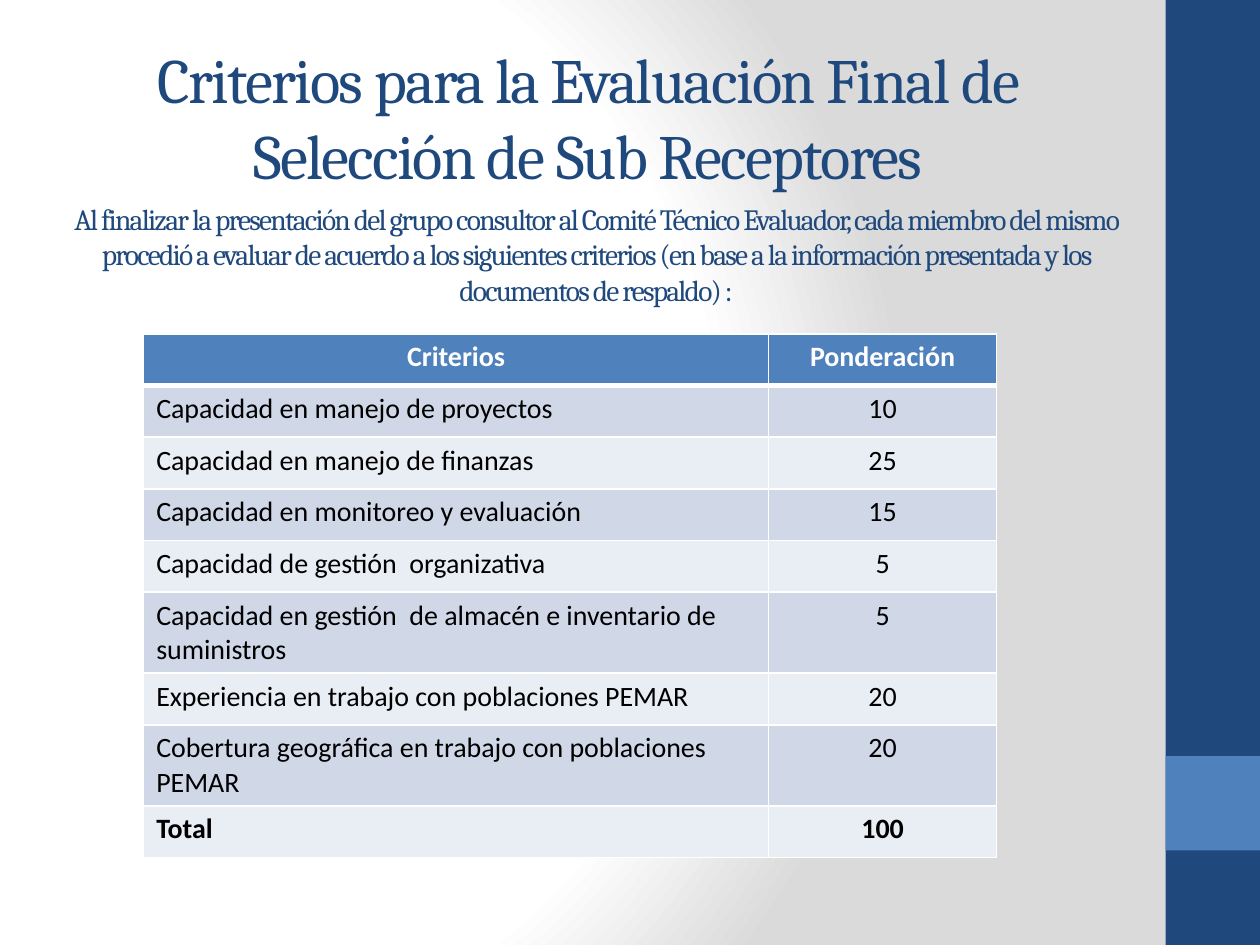
from typing import NamedTuple

from pptx import Presentation
from pptx import oxml
from pptx import util as u
from pptx.dml.color import RGBColor
from pptx.enum import shapes, text
from pptx.oxml.ns import nsdecls, qn

NAVY = RGBColor(0x1F, 0x49, 0x7D)
BLUE = RGBColor(0x4F, 0x81, 0xBD)
BAND_DARK = RGBColor(0xD0, 0xD8, 0xE8)
BAND_LIGHT = RGBColor(0xE9, 0xED, 0xF4)
WHITE = RGBColor(0xFF, 0xFF, 0xFF)
BLACK = RGBColor(0, 0, 0)
GREY = RGBColor(0xDA, 0xDA, 0xDA)

CENTER = text.PP_ALIGN.CENTER
LEFT = text.PP_ALIGN.LEFT
COLUMN_WIDTHS = (4.96, 1.81)
ROW_HEIGHT = 0.41


class Bar(NamedTuple):
    top: float
    height: float
    color: RGBColor


class Criterion(NamedTuple):
    name: str
    weight: str


SIDE_BARS = [Bar(0, 7.5, NAVY), Bar(6, 0.75, BLUE)]
HEADER = Criterion("Criterios", "Ponderación")
CRITERIA = [
    Criterion("Capacidad en manejo de proyectos", "10"),
    Criterion("Capacidad en manejo de finanzas", "25"),
    Criterion("Capacidad en monitoreo y evaluación", "15"),
    Criterion("Capacidad de gestión  organizativa", "5"),
    Criterion("Capacidad en gestión  de almacén e inventario de suministros", "5"),
    Criterion("Experiencia en trabajo con poblaciones PEMAR", "20"),
    Criterion("Cobertura geográfica en trabajo con poblaciones PEMAR", "20"),
]
TOTAL = Criterion("Total", "100")


def write(frame, words: str, *, size: float, font: str, color: RGBColor,
          bold: bool = False, align=CENTER, spacing: float = 0) -> None:
    """Fill a text frame with one formatted paragraph; spacing is in points."""
    para = frame.paragraphs[0]
    para.alignment = align
    span = para.add_run()
    span.text = words
    span.font.size = u.Pt(size)
    span.font.name = font
    span.font.bold = bold
    span.font.color.rgb = color
    if spacing:
        span.font._element.set("spc", str(round(spacing * 100)))


def set_background(page) -> None:
    stops = "".join(
        f'<a:gs pos="{percent * 1000}"><a:srgbClr val="{color}"/></a:gs>'
        for percent, color in ((0, WHITE), (75, WHITE), (100, GREY)))
    page.element.cSld.insert(0, oxml.parse_xml(
        f'<p:bg {nsdecls("p", "a")}><p:bgPr><a:gradFill rotWithShape="1">'
        f'<a:gsLst>{stops}</a:gsLst><a:path path="circle">'
        '<a:fillToRect l="20000" t="50000" r="100000" b="50000"/></a:path>'
        '</a:gradFill><a:effectLst/></p:bgPr></p:bg>'))


def draw_bar(page, bar: Bar) -> None:
    box = page.shapes.add_shape(
        shapes.MSO_SHAPE.RECTANGLE, u.Inches(9.25), u.Inches(bar.top),
        u.Inches(0.75), u.Inches(bar.height))
    box.shadow.inherit = False
    box.fill.solid()
    box.fill.fore_color.rgb = bar.color
    box.line.fill.background()


def set_borders(cell, bottom: float = 1) -> None:
    properties = cell._tc.get_or_add_tcPr()
    sides = (("lnL", 1), ("lnR", 1), ("lnT", 1), ("lnB", bottom))
    for index, (side, width) in enumerate(sides):
        properties.insert(index, oxml.parse_xml(
            f'<a:{side} {nsdecls("a")} w="{u.Pt(width)}"><a:solidFill>'
            f'<a:srgbClr val="{WHITE}"/></a:solidFill></a:{side}>'))


def draw_table(page) -> None:
    records = [HEADER, *CRITERIA, TOTAL]
    table = page.shapes.add_table(
        len(records), len(COLUMN_WIDTHS), u.Inches(1.14), u.Inches(2.65),
        u.Inches(sum(COLUMN_WIDTHS)), u.Inches(ROW_HEIGHT * len(records))).table
    for column, width in zip(table.columns, COLUMN_WIDTHS):
        column.width = u.Inches(width)
    for row, record in enumerate(records):
        table.rows[row].height = u.Inches(ROW_HEIGHT)
        is_header = record is HEADER
        band = BAND_DARK if row % 2 else BAND_LIGHT
        for column, words in enumerate(record):
            cell = table.cell(row, column)
            cell.fill.solid()
            cell.fill.fore_color.rgb = BLUE if is_header else band
            # Neighbouring cells share an edge, so the thick rule is set on both.
            set_borders(cell, bottom=3 if is_header else 1)
            if row == 1:
                cell._tc.tcPr.find(qn("a:lnT")).set("w", str(u.Pt(3)))
            write(cell.text_frame, words, size=16, font="Calibri",
                  color=WHITE if is_header else BLACK,
                  bold=is_header or record is TOTAL,
                  align=CENTER if is_header or column == 1 else LEFT)


def place_heading(box, words: str, *, left: float, top: float, width: float,
                  height: float, size: float) -> None:
    box.left, box.top = u.Inches(left), u.Inches(top)
    box.width, box.height = u.Inches(width), u.Inches(height)
    frame = box.text_frame
    frame.word_wrap = True
    frame.auto_size = text.MSO_AUTO_SIZE.NONE
    frame.vertical_anchor = text.MSO_ANCHOR.MIDDLE
    write(frame, words, size=size, font="Cambria", color=NAVY, spacing=-1)


def main() -> None:
    deck = Presentation()
    deck.slide_width, deck.slide_height = u.Inches(10), u.Inches(7.5)
    page = deck.slides.add_slide(deck.slide_layouts.get_by_name("Title Only"))
    set_background(page)
    for bar in SIDE_BARS:
        draw_bar(page, bar)
    place_heading(
        page.shapes.title,
        "Criterios para la Evaluación Final de Selección de Sub Receptores",
        left=0.5, top=0.3, width=8.33, height=1.25, size=36)
    draw_table(page)
    place_heading(
        page.shapes.add_textbox(0, 0, 0, 0),
        "Al finalizar la presentación del grupo consultor al Comité Técnico "
        "Evaluador, cada miembro del mismo procedió a evaluar de acuerdo a los "
        "siguientes criterios (en base a la información presentada y los "
        "documentos de respaldo) :",
        left=0.36, top=1.62, width=8.74, height=0.79, size=16.8)
    deck.save("out.pptx")


if __name__ == "__main__":
    main()
